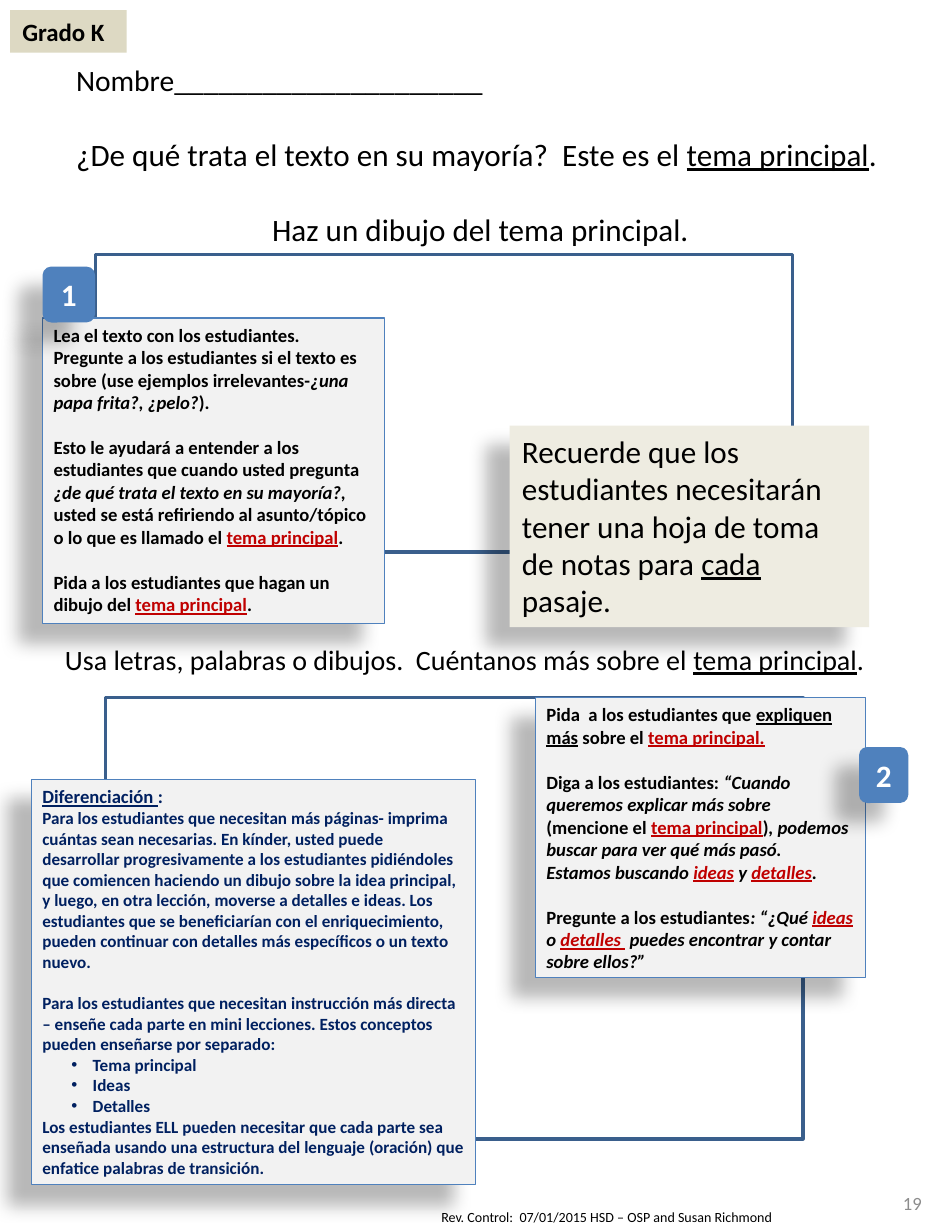
import pptx
import pptx.util
import pptx.dml.color
import pptx.enum.shapes
import pptx.enum.text
import pptx.oxml
import pptx.oxml.ns
from dataclasses import dataclass
from pptx.util import Inches, Pt

SHAPE = pptx.enum.shapes.MSO_SHAPE
ALIGN = pptx.enum.text.PP_ALIGN
ANCHOR = pptx.enum.text.MSO_ANCHOR
LINE_HEIGHT = 1.22  # one line of Calibri, relative to its size


@dataclass(frozen=True)
class Theme:
    font: str = "Calibri"
    black: str = "000000"
    white: str = "FFFFFF"
    gray: str = "8C8C8C"
    red: str = "C00000"
    navy: str = "002060"
    blue: str = "4F81BD"
    frame: str = "3A5F8C"
    note: str = "F2F2F2"
    tan: str = "DDD9C3"
    cream: str = "EEECE1"
    footer: float = 9
    detail: float = 11
    body: float = 12
    label: float = 16
    prompt: float = 18
    name: float = 19
    heading: float = 20


THEME = Theme()


@dataclass
class Para:
    """Runs are (text, marks): u underline, i italic, k underlined red key term."""
    runs: list
    size: float = THEME.body
    gap: bool = False  # one line of space above
    align: object = None
    bullet: bool = False


def rgb(value):
    return pptx.dml.color.RGBColor.from_string(value)


def add_bullet(paragraph):
    props = paragraph._p.get_or_add_pPr()
    props.set("marL", str(Inches(0.45)))
    props.set("indent", str(Inches(-0.19)))
    ns = pptx.oxml.ns.nsdecls("a")
    props.append(pptx.oxml.parse_xml(f'<a:buFont {ns} typeface="Arial"/>'))
    props.append(pptx.oxml.parse_xml(f'<a:buChar {ns} char="•"/>'))


def add_shadow(shape):
    shape._element.spPr.append(pptx.oxml.parse_xml(
        f'<a:effectLst {pptx.oxml.ns.nsdecls("a")}>'
        f'<a:outerShdw blurRad="{Pt(11.8)}" dist="{Pt(19.7)}" dir="{141 * 60000}" '
        'algn="tl" rotWithShape="0">'
        f'<a:srgbClr val="{THEME.black}"><a:alpha val="28000"/></a:srgbClr>'
        '</a:outerShdw></a:effectLst>'))


def write(shape, paras, color=THEME.black, bold=False, margins=(0.11, 0.06),
          anchor=ANCHOR.TOP, grow=True):
    frame = shape.text_frame
    frame.word_wrap = True
    frame.vertical_anchor = anchor
    sizing = pptx.enum.text.MSO_AUTO_SIZE
    frame.auto_size = sizing.SHAPE_TO_FIT_TEXT if grow else sizing.NONE
    frame.margin_left = frame.margin_right = Inches(margins[0])
    frame.margin_top = frame.margin_bottom = Inches(margins[1])
    for index, para in enumerate(paras):
        paragraph = frame.add_paragraph() if index else frame.paragraphs[0]
        paragraph.alignment = para.align or ALIGN.LEFT
        if para.gap:
            paragraph.space_before = Pt(para.size * LINE_HEIGHT)
        if para.bullet:
            add_bullet(paragraph)
        for text, marks in para.runs:
            run = paragraph.add_run()
            run.text = text
            font = run.font
            font.name, font.size, font.bold = THEME.font, Pt(para.size), bold
            font.italic = "i" in marks
            font.underline = "u" in marks or "k" in marks
            font.color.rgb = rgb(THEME.red if "k" in marks else color)


def add_text(slide, box, paras, **style):
    write(slide.shapes.add_textbox(*map(Inches, box)), paras, **style)


def add_box(slide, box, fill=None, line=None, width=0.75, shadow=False, kind=SHAPE.RECTANGLE):
    shape = slide.shapes.add_shape(kind, *map(Inches, box))
    if fill:
        shape.fill.solid()
        shape.fill.fore_color.rgb = rgb(fill)
    else:
        shape.fill.background()
    if line:
        shape.line.color.rgb = rgb(line)
        shape.line.width = Pt(width)
    else:
        shape.line.fill.background()
    if shadow:
        add_shadow(shape)
    else:
        shape.shadow.inherit = False
    return shape


def add_drawing_frame(slide, box):
    add_box(slide, box, line=THEME.frame, width=2)


def add_note(slide, box, paras, color=THEME.black):
    note = add_box(slide, box, THEME.note, THEME.blue, shadow=True)
    write(note, paras, color, bold=True, margins=(0.1, 0.05))


def add_badge(slide, box, number):
    badge = add_box(slide, box, THEME.blue, shadow=True, kind=SHAPE.ROUNDED_RECTANGLE)
    write(badge, [Para([(number, "")], THEME.heading, align=ALIGN.CENTER)], THEME.white,
          bold=True, margins=(0.1, 0.05), anchor=ANCHOR.MIDDLE, grow=False)


def main():
    deck = pptx.Presentation()
    deck.slide_width, deck.slide_height = Inches(8.5), Inches(11)
    slide = deck.slides.add_slide(deck.slide_layouts[6])
    topic = ("tema principal", "k")

    # Footer and page number
    add_text(slide, (3.83, 10.74, 4.25, 0.26), [Para(
        [("Rev. Control:  07/01/2015 HSD – OSP and Susan Richmond", "")], THEME.footer)],
        margins=(0.11, 0.05))
    add_text(slide, (7.42, 10.53, 0.92, 0.42),
             [Para([("19", "")], THEME.body, align=ALIGN.RIGHT)],
             color=THEME.gray, anchor=ANCHOR.MIDDLE, grow=False)

    # Student heading and first drawing area
    add_text(slide, (0.57, 0.49, 7.44, 1.78), [
        Para([("Nombre" + "_" * 21, "")], THEME.name),
        Para([("¿De qué trata el texto en su mayoría?  Este es el ", ""),
              ("tema principal", "u"), (".", "")], THEME.heading, gap=True),
        Para([("Haz un dibujo del tema principal.", "")], THEME.heading, gap=True,
             align=ALIGN.CENTER)])
    add_drawing_frame(slide, (0.85, 2.27, 6.23, 2.66))
    grade = add_box(slide, (0.09, 0.09, 1.04, 0.38), THEME.tan)
    write(grade, [Para([("Grado K", "")], THEME.label)], bold=True)

    # Second prompt and drawing area
    add_text(slide, (0.47, 5.68, 7.44, 0.43), [Para(
        [("Usa letras, palabras o dibujos.  Cuéntanos más sobre el ", ""),
         ("tema principal", "u"), (".", "")], THEME.prompt)])
    add_drawing_frame(slide, (0.94, 6.23, 6.23, 3.94))

    # Teacher step 1
    add_note(slide, (0.38, 2.84, 3.05, 2.73), [
        Para([("Lea el texto con los estudiantes.  Pregunte a los estudiantes si el texto "
               "es sobre (use ejemplos irrelevantes-", ""),
              ("¿una papa frita?, ¿pelo?", "i"), (").", "")]),
        Para([("Esto le ayudará a entender a los estudiantes que cuando usted pregunta ", ""),
              ("¿de qué trata el texto en su mayoría?, ", "i"),
              ("usted se está refiriendo al asunto/tópico o lo que es llamado el ", ""),
              topic, (".", "")], gap=True),
        Para([("Pida a los estudiantes que hagan un dibujo del ", ""), topic, (".", "")],
             gap=True)])
    add_badge(slide, (0.38, 2.38, 0.47, 0.5), "1")

    # Teacher step 2
    add_note(slide, (4.78, 6.23, 2.95, 2.5), [
        Para([("Pida  a los estudiantes que ", ""), ("expliquen más", "u"), (" sobre el ", ""),
              ("tema principal.", "k")]),
        Para([("Diga a los estudiantes: ", ""), ("“Cuando queremos explicar más sobre ", "i"),
              ("(mencione el ", ""), topic, (")", ""),
              (", podemos buscar para ver qué más pasó.  Estamos buscando ", "i"),
              ("ideas", "ik"), (" y ", "i"), ("detalles", "ik"), (".", "i")], gap=True),
        Para([("Pregunte a los estudiantes", ""), (": “¿Qué ", "i"), ("ideas ", "ik"),
              ("o ", "i"), ("detalles ", "ik"),
              (" puedes encontrar y contar sobre ellos?”", "i")], gap=True)])
    add_badge(slide, (7.67, 6.67, 0.44, 0.5), "2")

    # Reminder
    reminder = add_box(slide, (4.55, 3.8, 3.21, 1.8), THEME.cream, shadow=True)
    write(reminder, [Para(
        [("Recuerde que los estudiantes necesitarán tener una hoja de toma de notas para ", ""),
         ("cada", "u"), (" pasaje.", "")], THEME.heading)])

    # Differentiation
    skills = [Para([(skill, "")], THEME.detail, bullet=True)
              for skill in ("Tema principal", "Ideas", "Detalles")]
    add_note(slide, (0.28, 6.96, 3.97, 3.62), [
        Para([("Diferenciación ", "u"), (":", "")]),
        Para([("Para los estudiantes que necesitan más páginas- imprima cuántas sean "
               "necesarias. En kínder, usted puede desarrollar progresivamente a los "
               "estudiantes pidiéndoles que comiencen haciendo un dibujo sobre la idea "
               "principal,  y luego, en otra lección, moverse a detalles e ideas. Los "
               "estudiantes que se beneficiarían con el enriquecimiento, pueden continuar "
               "con detalles más específicos o un texto nuevo.", "")], THEME.detail),
        Para([("Para los estudiantes que necesitan instrucción más directa – enseñe cada "
               "parte en mini lecciones. Estos conceptos pueden enseñarse por separado:", "")],
             THEME.detail, gap=True),
        *skills,
        Para([("Los estudiantes ELL pueden necesitar que cada parte sea enseñada usando una "
               "estructura del lenguaje (oración) que enfatice palabras de transición.", "")],
             THEME.detail)], THEME.navy)

    deck.save("out.pptx")


if __name__ == "__main__":
    main()
